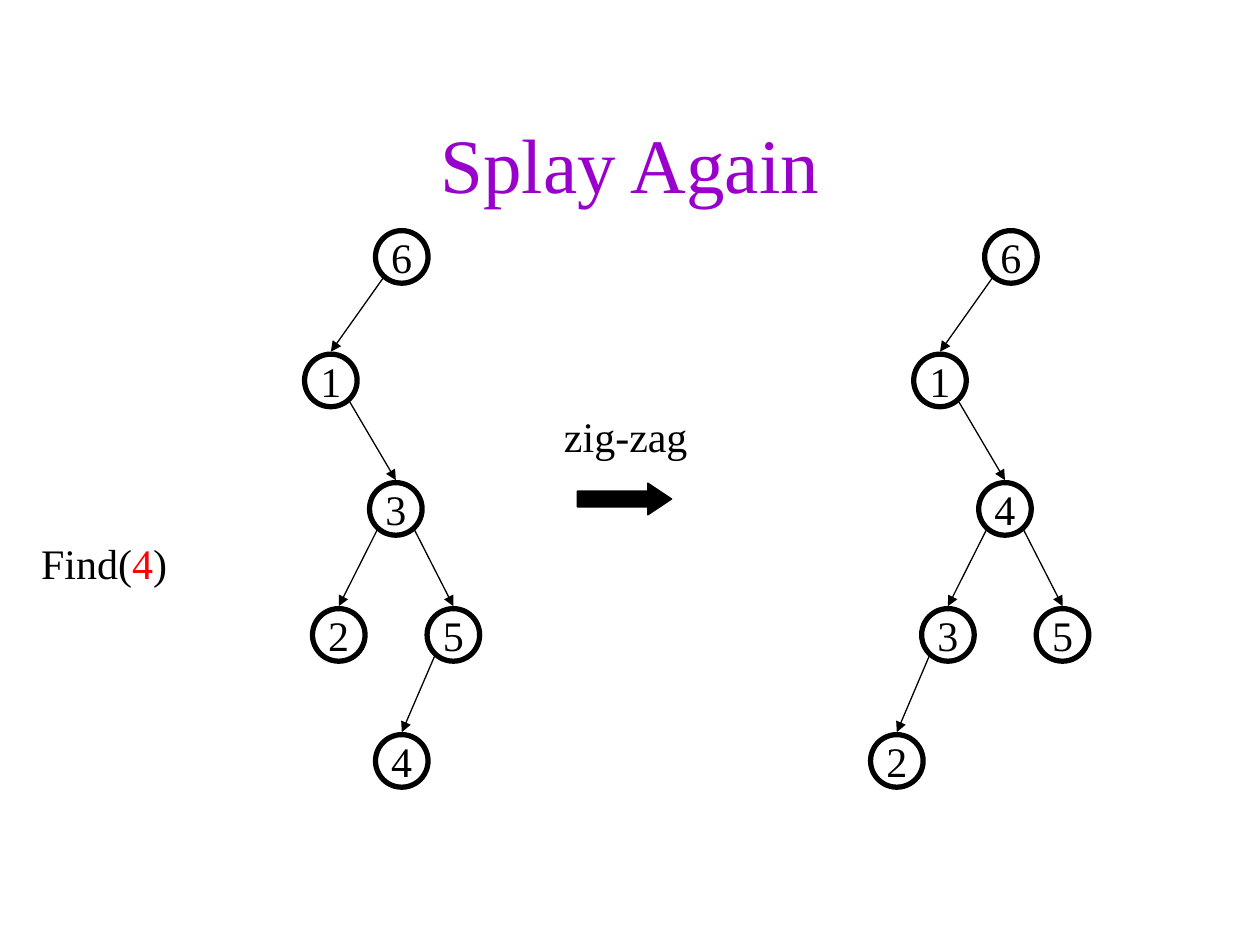
from lxml.etree import SubElement
from pptx import Presentation
from pptx.dml.color import RGBColor
from pptx.enum.shapes import MSO_CONNECTOR, MSO_SHAPE
from pptx.enum.text import MSO_ANCHOR, PP_ALIGN
from pptx.oxml.ns import qn
from pptx.util import Cm, Pt

BLACK = RGBColor(0, 0, 0)
RED = RGBColor(255, 0, 0)
PURPLE = RGBColor(0x99, 0, 0xCC)

SIZE = 1.06
SHIFT = 12.28
ROWS = [5.18, 7.67, 10.26, 12.8, 15.34]
TOP = [("6", 8.1, 0, None), ("1", 6.67, 1, 0)]
LEFT = TOP + [("3", 7.98, 2, 1), ("2", 6.83, 3, 2), ("5", 9.14, 3, 2), ("4", 8.1, 4, 4)]
RIGHT = TOP + [("4", 7.98, 2, 1), ("3", 6.83, 3, 2), ("5", 9.14, 3, 2), ("2", 5.8, 4, 3)]


class Deck:
    font = "Times New Roman"

    def __init__(self, pres):
        self.shapes = pres.slides.add_slide(pres.slide_layouts[6]).shapes

    def label(self, frame, parts, size=24, align=PP_ALIGN.LEFT, wrap=False):
        frame.word_wrap = wrap
        frame.vertical_anchor = MSO_ANCHOR.MIDDLE
        para = frame.paragraphs[0]
        para.alignment = align
        para.font.name = self.font
        para.font.size = Pt(size)
        for words, color in parts:
            run = para.add_run()
            run.text = words
            run.font.color.rgb = color

    def text(self, box, parts, **style):
        frame = self.shapes.add_textbox(*map(Cm, box)).text_frame
        self.label(frame, parts, **style)

    def shape(self, kind, box, width):
        shape = self.shapes.add_shape(kind, *map(Cm, box))
        shape.shadow.inherit = False
        shape.line.color.rgb = BLACK
        shape.line.width = Pt(width)
        return shape

    def block(self, box):
        arrow = self.shape(MSO_SHAPE.RIGHT_ARROW, box, 0.75)
        arrow.adjustments[1] = 0.75
        arrow.fill.solid()
        arrow.fill.fore_color.rgb = BLACK

    def node(self, key, x, y):
        box = (x - SIZE / 2, y - SIZE / 2, SIZE, SIZE)
        node = self.shape(MSO_SHAPE.OVAL, box, 3)
        node.fill.background()
        self.label(node.text_frame, [(key, BLACK)], align=PP_ALIGN.CENTER)

    def edge(self, x, y, to_x, to_y):
        side = 0.38 if to_x > x else -0.38
        ends = (x + side, y + 0.43, to_x, to_y - 0.58)
        edge = self.shapes.add_connector(MSO_CONNECTOR.STRAIGHT, *map(Cm, ends))
        edge.line.color.rgb = BLACK
        edge.line.width = Pt(0.75)
        props = edge.element.spPr
        SubElement(props.find(qn("a:ln")), qn("a:tailEnd"), type="triangle")
        SubElement(props, qn("a:effectLst"))

    def tree(self, nodes, shift=0):
        spots = [(x + shift, ROWS[row]) for _, x, row, _ in nodes]
        for (key, _, _, parent), spot in zip(nodes, spots):
            if parent is not None:
                self.edge(*spots[parent], *spot)
            self.node(key, *spot)


def main():
    pres = Presentation()
    pres.slide_width, pres.slide_height = Cm(25.4), Cm(19.05)
    deck = Deck(pres)
    deck.text((1.9, 1.7, 21.6, 3.18), [("Splay Again", PURPLE)],
              wrap=True, size=44, align=PP_ALIGN.CENTER)
    deck.text((0.58, 10.7, 3.05, 1.27), [("Find(", BLACK), ("4", RED), (")", BLACK)])
    deck.block((11.64, 9.74, 1.9, 0.64))
    deck.text((11.12, 8.15, 3, 1.27), [("zig-zag", BLACK)])
    deck.tree(LEFT)
    deck.tree(RIGHT, SHIFT)
    pres.save("out.pptx")


if __name__ == "__main__":
    main()
